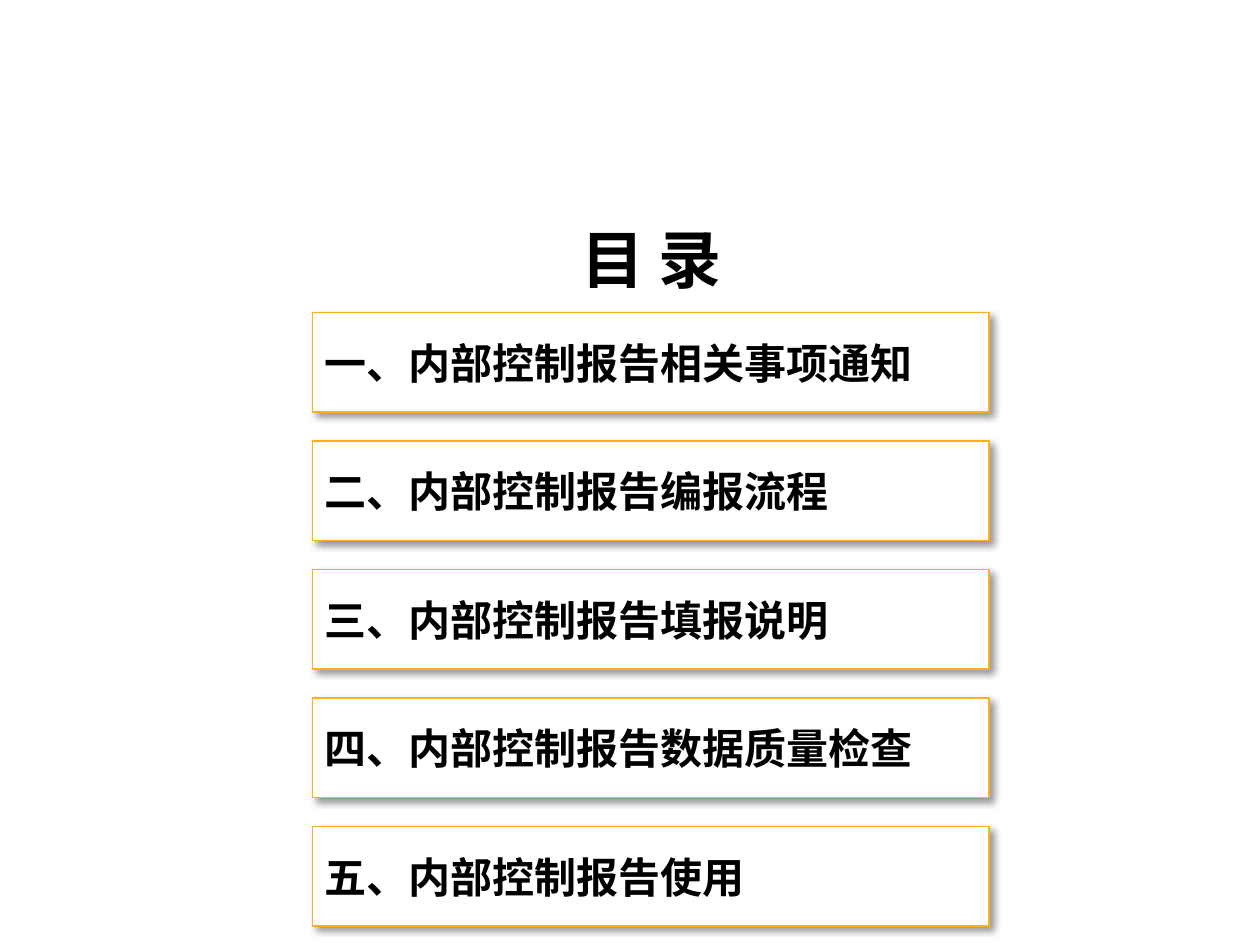
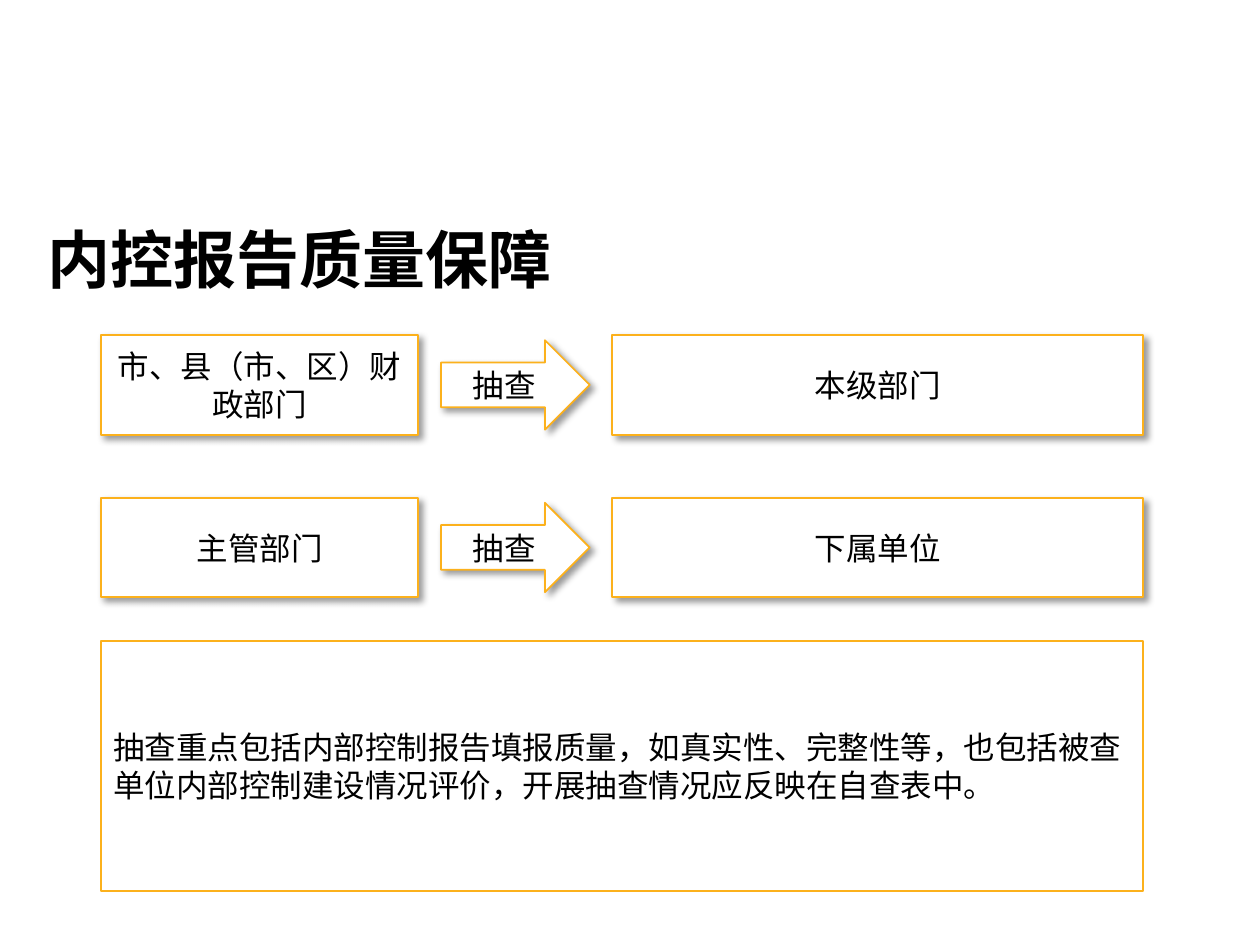
from lxml import etree
from pptx import Presentation
from pptx.dml.color import RGBColor
from pptx.enum.shapes import MSO_SHAPE
from pptx.enum.text import MSO_ANCHOR, MSO_AUTO_SIZE, PP_ALIGN
from pptx.oxml import parse_xml
from pptx.oxml.ns import qn
from pptx.util import Inches, Pt

RECT, ARROW = MSO_SHAPE.RECTANGLE, MSO_SHAPE.RIGHT_ARROW
PROCESS = MSO_SHAPE.FLOWCHART_PROCESS
LEFT, CENTER = PP_ALIGN.LEFT, PP_ALIGN.CENTER
TOP, MIDDLE = MSO_ANCHOR.TOP, MSO_ANCHOR.MIDDLE
FONT = "Noto Sans CJK SC"
BLACK, WHITE, ORANGE = "000000", "FFFFFF", "FCB11C"

CONTENTS_TITLE = "目 录"
CONTENTS = [
    "一、内部控制报告相关事项通知",
    "二、内部控制报告编报流程",
    "三、内部控制报告填报说明",
    "四、内部控制报告数据质量检查",
    "五、内部控制报告使用",
]
QUALITY_TITLE = "内控报告质量保障"
CHECKS = [
    ("市、县（市、区）财政部门", "抽查", "本级部门"),
    ("主管部门", "抽查", "下属单位"),
]
CHECK_FOCUS = (
    "抽查重点包括内部控制报告填报质量，如真实性、完整性等，"
    "也包括被查单位内部控制建设情况评价，开展抽查情况应反映在自查表中。"
)

TITLE_TOP, TITLE_H = 1.7, 0.71
BOX_H, ARROW_H = 0.79, 0.71
CONTENTS_TOP, CONTENTS_STEP = 2.48, 1.02
CHECKS_TOP, CHECKS_STEP = 2.66, 1.29

SHADOW = (
    '<a:outerShdw xmlns:a="http://schemas.openxmlformats.org/drawingml/2006/main"'
    f' blurRad="{Pt(4)}" dist="{Pt(3)}" dir="{45 * 60000}" algn="tl" rotWithShape="0">'
    f'<a:srgbClr val="{BLACK}"><a:alpha val="40000"/></a:srgbClr></a:outerShdw>'
)


def rgb(color):
    return RGBColor.from_string(color)


def set_text(s, text, size=18, bold=False, align=LEFT, anchor=MIDDLE, wrap=True):
    tf = s.text_frame
    tf.word_wrap = wrap
    tf.auto_size = MSO_AUTO_SIZE.NONE
    tf.vertical_anchor = anchor
    p = tf.paragraphs[0]
    p.alignment = align
    r = p.add_run()
    r.text = text
    r.font.size = Pt(size)
    r.font.bold = bold
    r.font.color.rgb = rgb(BLACK)
    r.font.name = FONT
    ea = etree.SubElement(r.font._element, qn("a:ea"))
    ea.set("typeface", FONT)


def add_title_slide(prs, text, left, width, **text_format):
    slide = prs.slides.add_slide(prs.slide_layouts.get_by_name("Title Only"))
    title = slide.shapes.title
    title.left, title.top = Inches(left), Inches(TITLE_TOP)
    title.width, title.height = Inches(width), Inches(TITLE_H)
    set_text(title, text, size=36, bold=True, anchor=TOP, **text_format)
    return slide


def add_box(slide, text, left, top, width, height=BOX_H, kind=RECT,
            shadow=True, **text_format):
    s = slide.shapes.add_shape(
        kind, Inches(left), Inches(top), Inches(width), Inches(height))
    s.fill.solid()
    s.fill.fore_color.rgb = rgb(WHITE)
    s.line.color.rgb = rgb(ORANGE)
    s.line.width = Pt(1)
    s.shadow.inherit = False
    if shadow:
        s._element.spPr.find(qn("a:effectLst")).append(parse_xml(SHADOW))
    set_text(s, text, **text_format)


def build_contents(prs):
    slide = add_title_slide(
        prs, CONTENTS_TITLE, 4.44, 1.46, align=CENTER, wrap=False)
    for i, item in enumerate(CONTENTS):
        add_box(slide, item, 2.48, CONTENTS_TOP + i * CONTENTS_STEP, 5.37,
                size=24, bold=True)


def build_quality(prs):
    slide = add_title_slide(prs, QUALITY_TITLE, 0.28, 9.3)
    for i, (checker, action, checked) in enumerate(CHECKS):
        top = CHECKS_TOP + i * CHECKS_STEP
        add_box(slide, checker, 0.8, top, 2.52, align=CENTER)
        add_box(slide, action, 3.5, top + (BOX_H - ARROW_H) / 2, 1.18, ARROW_H,
                kind=ARROW, align=CENTER)
        add_box(slide, checked, 4.86, top, 4.21, align=CENTER)
    add_box(slide, CHECK_FOCUS, 0.8, 5.09, 8.27, 1.98, kind=PROCESS, shadow=False)


def main():
    prs = Presentation()
    prs.slide_width, prs.slide_height = Inches(10), Inches(7.5)
    build_contents(prs)
    build_quality(prs)
    prs.save("out.pptx")


if __name__ == "__main__":
    main()
